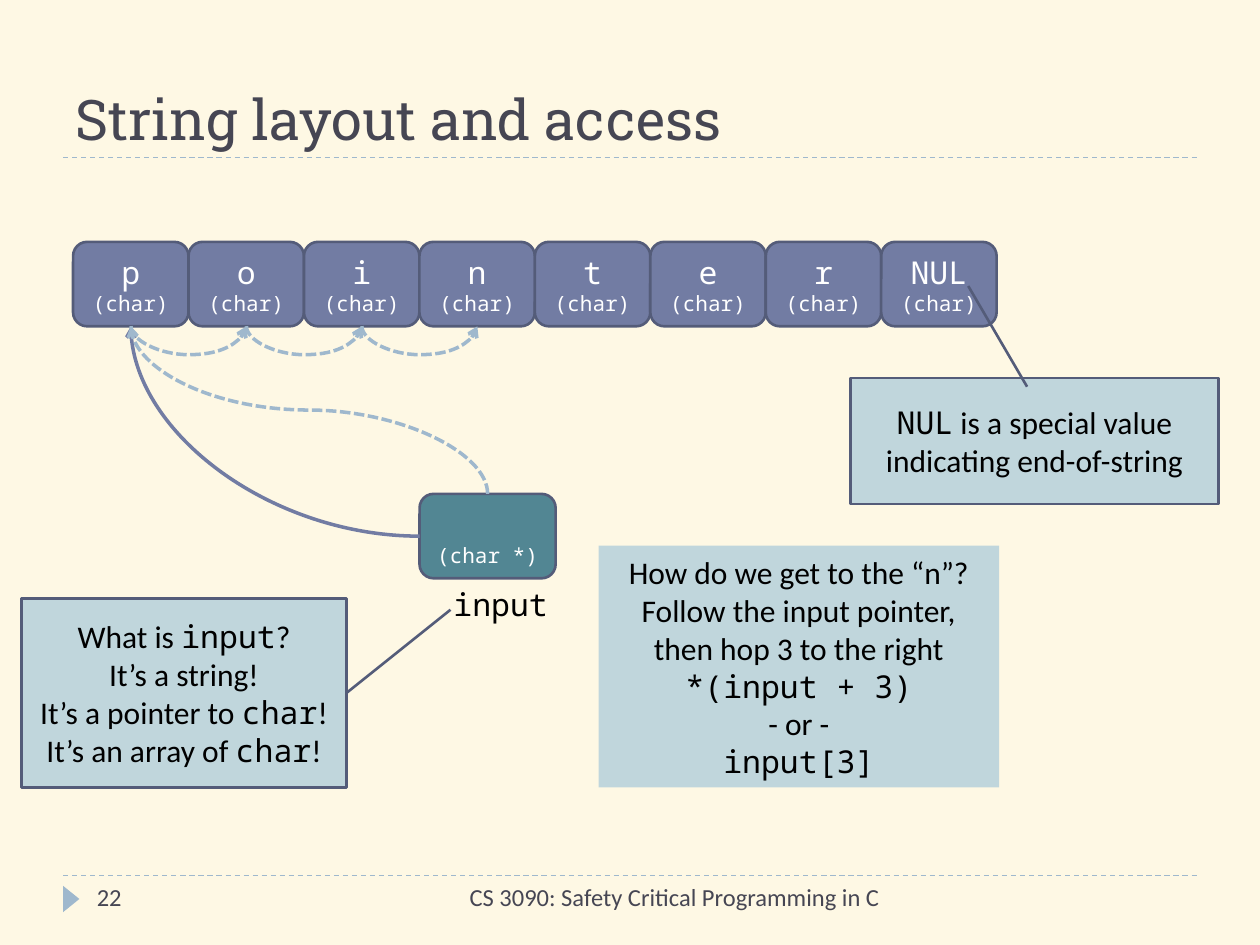
from lxml.etree import SubElement
from pptx import Presentation
from pptx.dml.color import RGBColor
from pptx.enum.dml import MSO_LINE
from pptx.enum.shapes import MSO_CONNECTOR, MSO_SHAPE
from pptx.enum.text import MSO_ANCHOR as ANCHOR, PP_ALIGN as ALIGN
from pptx.oxml.ns import qn
from pptx.util import Emu, Inches, Pt

COLORS = {
    "background": "FEF8E4", "ink": "464653", "black": "000000", "white": "FFFFFF",
    "cell": "727CA3", "outline": "545C79", "pointer": "528693",
    "accent": "9FB8CD", "note": "C0D6DC",
}
TITLE, BODY, MONO = "Roboto Slab", "Calibri", "Noto Sans Mono"
CELL_HEIGHT = 0.67
HOP_DEPTH = 0.25


def color(name):
    return RGBColor.from_string(COLORS[name])


def write(shape, paragraphs, ink="black", align=ALIGN.CENTER, anchor=ANCHOR.MIDDLE, wrap=True):
    """Each paragraph is a list of (text, font, size) runs."""
    frame = shape.text_frame
    frame.word_wrap = wrap
    frame.vertical_anchor = anchor
    for index, runs in enumerate(paragraphs):
        paragraph = frame.add_paragraph() if index else frame.paragraphs[0]
        paragraph.alignment = align
        for text, font, size in runs:
            run = paragraph.add_run()
            run.text = text
            run.font.name, run.font.size = font, Pt(size)
            run.font.color.rgb = color(ink)


def add_text(slide, box, runs, **style):
    write(slide.shapes.add_textbox(*map(Inches, box)), [runs], **style)


def add_box(slide, kind, box, fill, outline="outline"):
    shape = slide.shapes.add_shape(kind, *map(Inches, box))
    shape.shadow.inherit = False
    shape.fill.solid()
    shape.fill.fore_color.rgb = color(fill)
    if outline:
        shape.line.color.rgb = color(outline)
        shape.line.width = Pt(1.5)
    else:
        shape.line.fill.background()
    return shape


def add_line(slide, kind, start, end, ink, width, dash=None):
    line = slide.shapes.add_connector(kind, *map(Inches, (*start, *end)))
    SubElement(line._element.spPr, qn("a:effectLst"))
    line.line.color.rgb = color(ink)
    line.line.width = Pt(width)
    if dash:
        line.line.dash_style = dash
    return line


def add_curve(slide, start, end, ink, preset, rotation, flip=None, depth=None, dash=None):
    """Curved arrow; a quarter turn swaps its sides, depth lets it bulge sideways."""
    curve = add_line(slide, MSO_CONNECTOR.CURVE, start, end, ink, 2, dash)
    properties = curve._element.spPr
    width, height = (abs(b - a) for a, b in zip(start, end))
    left, top = map(min, zip(start, end))
    if rotation == 270:
        left, top = left + (width - height) / 2, top + (height - width) / 2
        width, height = height, width
    curve.left, curve.top = Inches(left), Inches(top)
    curve.width, curve.height = Inches(width), Inches(height)

    transform = properties.find(qn("a:xfrm"))
    for name in ("flipH", "flipV"):
        transform.attrib.pop(name, None)
    transform.set("rot", str(rotation * 60000))
    if flip:
        transform.set(flip, "1")

    geometry = properties.find(qn("a:prstGeom"))
    geometry.set("prst", preset)
    if depth:
        curve.width = Emu(1588)
        ratio = round(Inches(depth) / curve.width * 100000)
        guides = geometry.find(qn("a:avLst"))
        SubElement(guides, qn("a:gd"), name="adj1", fmla=f"val {ratio}")
    SubElement(curve.line._get_or_add_ln(), qn("a:tailEnd"), type="arrow")


def add_frame(slide, box):
    """Title, rules and footer."""
    left, top, width, height = box
    title_rule, footer_rule = top + 1.25, top + 6.95
    for y in (footer_rule, title_rule):
        add_line(slide, MSO_CONNECTOR.STRAIGHT, (left, y), (left + width, y),
                 "accent", 0.75, MSO_LINE.DASH)
    marker = add_box(slide, MSO_SHAPE.ISOSCELES_TRIANGLE,
                     (left - 0.04, footer_rule + 0.12, 0.21, 0.13), "accent", None)
    marker.rotation = 90
    add_text(slide, (left, top + 0.17, width, 1.08),
             [("String layout and access", TITLE, 32)],
             ink="ink", align=ALIGN.LEFT, anchor=ANCHOR.BOTTOM)
    add_text(slide, (left + 2.67, footer_rule, 3.91, 0.4),
             [("CS 3090: Safety Critical Programming in C", BODY, 14)],
             ink="ink", align=ALIGN.RIGHT, anchor=ANCHOR.TOP)
    add_text(slide, (left + 0.17, footer_rule, 2.17, 0.4), [("22", BODY, 14)],
             ink="ink", align=ALIGN.LEFT, anchor=ANCHOR.TOP)


def add_string(slide, box, letters):
    """Row of char cells; returns the bottom centre of each."""
    left, top, width, height = box
    pitch = width / len(letters)
    for index, letter in enumerate(letters):
        cell = add_box(slide, MSO_SHAPE.ROUNDED_RECTANGLE,
                       (left + index * pitch, top, pitch, height), "cell")
        write(cell, [[(letter, MONO, 18)], [("(char)", MONO, 12)]], ink="white")
    return [(left + (index + 0.5) * pitch, top + height) for index in range(len(letters))]


def add_pointer(slide, box, target):
    """The input variable, its label and its arrow to the first cell."""
    left, top, width, height = box
    cell = add_box(slide, MSO_SHAPE.ROUNDED_RECTANGLE, box, "pointer")
    write(cell, [[("(char *)", MONO, 12)]], ink="white", anchor=ANCHOR.BOTTOM)
    add_curve(slide, (left, top + height / 2), target, "cell", "curvedConnector2", 180)
    add_text(slide, (left + 0.17, top + height, 0.96, 0.4), [("input", MONO, 18)],
             align=ALIGN.LEFT, anchor=ANCHOR.TOP, wrap=False)


def add_hops(slide, start, stops):
    """Dashed route from the pointer to the first cell, then cell by cell."""
    style = {"ink": "accent", "preset": "curvedConnector3", "rotation": 270,
             "dash": MSO_LINE.SQUARE_DOT}
    add_curve(slide, start, stops[0], flip="flipV", **style)
    for here, there in zip(stops, stops[1:]):
        add_curve(slide, here, there, flip="flipH", depth=HOP_DEPTH, **style)


def add_note(slide, box, paragraphs, leader=None):
    """Note box, with a leader line if its adjustments are given."""
    kind = MSO_SHAPE.LINE_CALLOUT_1 if leader else MSO_SHAPE.RECTANGLE
    note = add_box(slide, kind, box, "note", "outline" if leader else None)
    for index, value in enumerate(leader or ()):
        note.adjustments[index] = value
    write(note, [[(text, font, 18) for text, font in runs] for runs in paragraphs],
          wrap=bool(leader))


def main():
    presentation = Presentation()
    presentation.slide_width, presentation.slide_height = Inches(10), Inches(7.5)
    slide = presentation.slides.add_slide(presentation.slide_layouts[6])
    slide.background.fill.solid()
    slide.background.fill.fore_color.rgb = color("background")

    add_frame(slide, (0.5, 0, 9, 7.5))
    stops = add_string(slide, (0.58, 1.92, 7.33, CELL_HEIGHT), [*"pointer", "NUL"])
    pointer = (3.33, 3.92, 1.08, CELL_HEIGHT)
    add_pointer(slide, pointer, stops[0])
    add_note(slide, (0.17, 4.75, 2.58, 1.5), [
        [("What is ", BODY), ("input", MONO), ("?", BODY)],
        [("It’s a string!", BODY)],
        [("It’s a pointer to ", BODY), ("char", MONO), ("!", BODY)],
        [("It’s an array of ", BODY), ("char", MONO), ("!", BODY)],
    ], leader=(0.5, 1, 0.06, 1.32))
    add_note(slide, (4.75, 4.33, 3.18, 1.92), [
        [("How do we get to the “n”?", BODY)],
        [("Follow the input pointer,", BODY)],
        [("then hop 3 to the right", BODY)],
        [("*(input + 3)", MONO)],
        [("- or -", BODY)],
        [("input[3]", MONO)],
    ])
    add_hops(slide, (pointer[0] + pointer[2] / 2, pointer[1]), stops[:4])
    add_note(slide, (6.75, 3, 2.92, 1), [
        [("NUL", MONO), (" is a special value", BODY)],
        [("indicating end-of-string", BODY)],
    ], leader=(0.07, 0.48, -0.73, 0.32))
    presentation.save("out.pptx")


if __name__ == "__main__":
    main()
